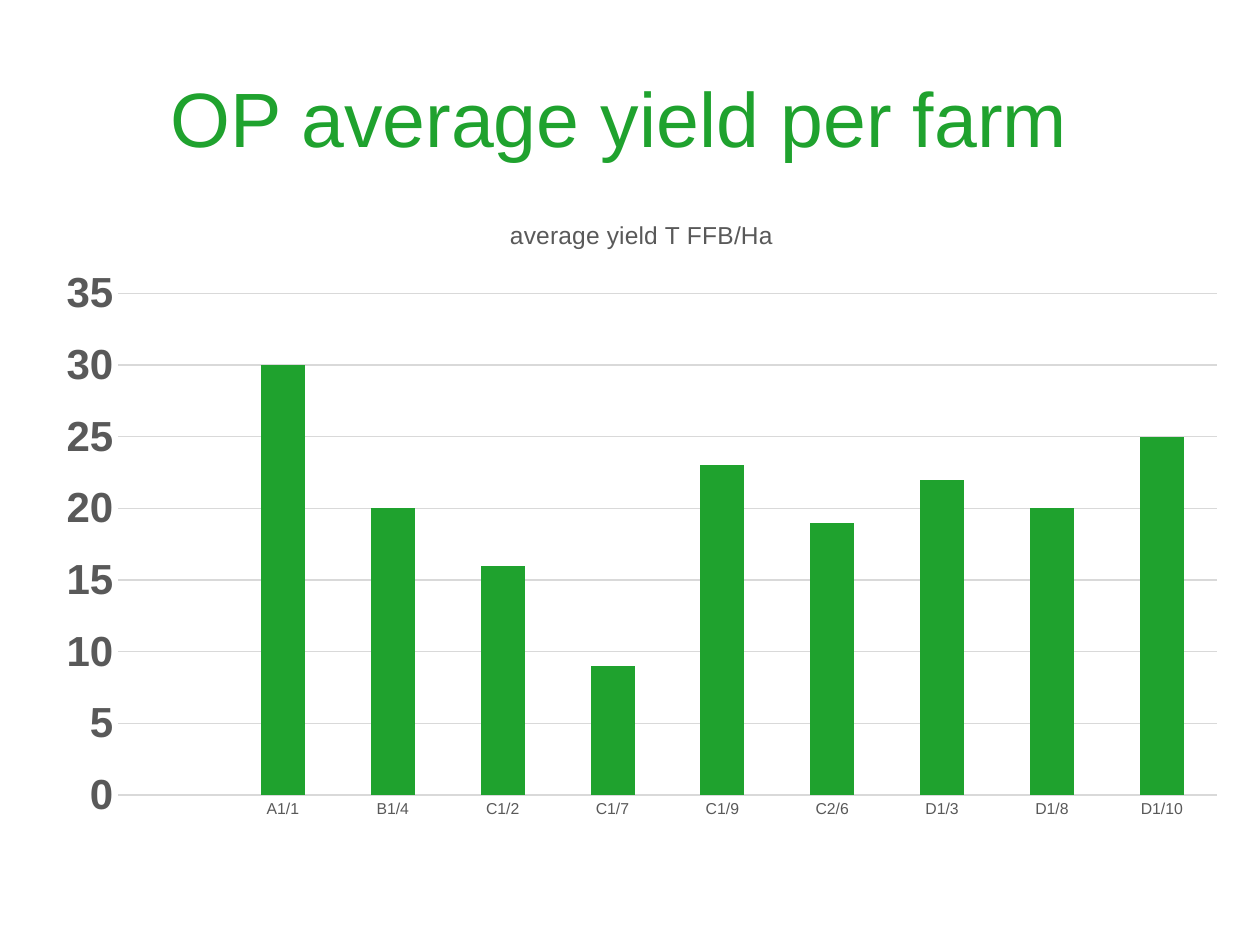
from pptx import Presentation
from pptx.chart.data import CategoryChartData
from pptx.dml.color import RGBColor
from pptx.enum.chart import XL_CHART_TYPE, XL_TICK_MARK
from pptx.enum.text import MSO_ANCHOR, PP_ALIGN
from pptx.util import Pt

GREEN = RGBColor(0x1F, 0xA2, 0x2E)
TEXT_GRAY = RGBColor(0x59, 0x59, 0x59)
GRID_GRAY = RGBColor(0xD9, 0xD9, 0xD9)
FONT = "Arial"

SERIES_NAME = "average yield T FFB/Ha"
# The unnamed first category keeps an empty slot beside the value axis.
FARM_YIELDS = [
    ("", None), ("A1/1", 30), ("B1/4", 20), ("C1/2", 16), ("C1/7", 9),
    ("C1/9", 23), ("C2/6", 19), ("D1/3", 22), ("D1/8", 20), ("D1/10", 25),
]


def set_font(font, size, color, bold=False):
    font.name = FONT
    font.size = Pt(size)
    font.bold = bold
    font.color.rgb = color


def add_title(page, text):
    title = page.shapes.title
    title.left, title.top, title.width, title.height = Pt(36), Pt(21.6), Pt(648), Pt(90)
    frame = title.text_frame
    frame.text = text
    frame.vertical_anchor = MSO_ANCHOR.MIDDLE
    paragraph = frame.paragraphs[0]
    paragraph.alignment = PP_ALIGN.CENTER
    set_font(paragraph.font, 44, GREEN)


def format_axis(axis, size, bold=False):
    axis.major_tick_mark = XL_TICK_MARK.NONE
    axis.minor_tick_mark = XL_TICK_MARK.NONE
    axis.format.line.fill.background()
    set_font(axis.tick_labels.font, size, TEXT_GRAY, bold)


def format_value_axis(axis):
    format_axis(axis, 24, bold=True)
    axis.minimum_scale, axis.maximum_scale, axis.major_unit = 0, 35, 5
    axis.tick_labels.number_format = "#,##0"
    axis.tick_labels.number_format_is_linked = False
    axis.has_major_gridlines = True
    grid_line = axis.major_gridlines.format.line
    grid_line.color.rgb = GRID_GRAY
    grid_line.width = Pt(0.75)


def add_yield_chart(page):
    data = CategoryChartData()
    data.categories = [farm for farm, _ in FARM_YIELDS]
    data.add_series(SERIES_NAME, [value for _, value in FARM_YIELDS])
    chart = page.shapes.add_chart(
        XL_CHART_TYPE.COLUMN_CLUSTERED, Pt(24.3), Pt(111.6), Pt(684.7), Pt(363.6), data
    ).chart
    chart.font.name = FONT
    chart.font.size = Pt(10)
    chart.has_legend = False
    chart.has_title = True
    title_frame = chart.chart_title.text_frame
    title_frame.text = SERIES_NAME
    set_font(title_frame.paragraphs[0].font, 14, TEXT_GRAY)
    chart.chart_title.include_in_layout = False

    format_axis(chart.category_axis, 9)
    format_value_axis(chart.value_axis)

    plot = chart.plots[0]
    plot.gap_width = 150
    plot.vary_by_categories = False
    fill = plot.series[0].format.fill
    fill.solid()
    fill.fore_color.rgb = GREEN


def main():
    deck = Presentation()
    deck.slide_width, deck.slide_height = Pt(720), Pt(540)
    page = deck.slides.add_slide(deck.slide_layouts.get_by_name("Title Only"))
    add_title(page, "OP average yield per farm ")
    add_yield_chart(page)
    deck.save("out.pptx")


if __name__ == "__main__":
    main()
